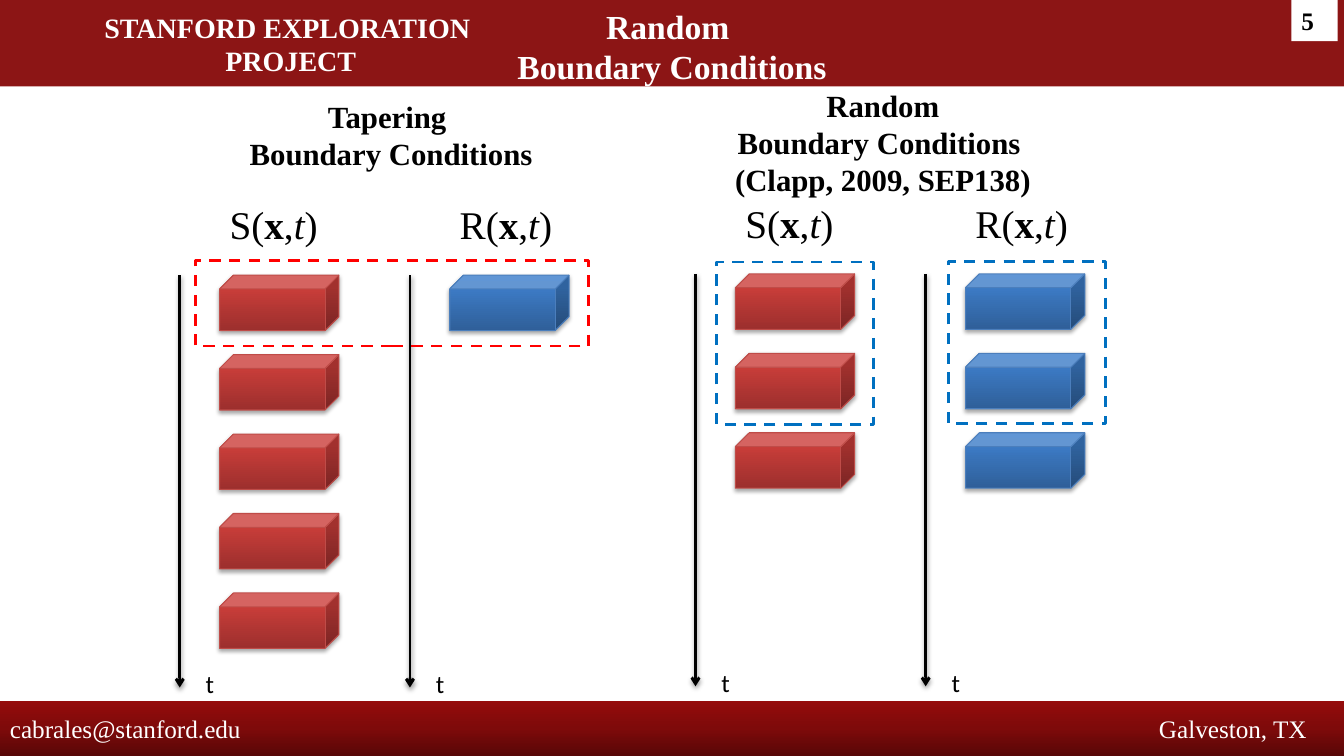
from dataclasses import dataclass

from lxml.etree import SubElement as Sub
from pptx import Presentation
from pptx.dml.color import RGBColor as RGB
from pptx.enum.dml import MSO_LINE as Dash
from pptx.enum.shapes import MSO_CONNECTOR as Conn, MSO_SHAPE as Kind
from pptx.enum.text import MSO_ANCHOR as Anchor, PP_ALIGN as Align
from pptx.oxml.ns import qn
from pptx.util import Inches, Pt

COLS, ROWS = 160, 90


@dataclass(frozen=True)
class Theme:
    """Colours, fonts and type sizes of the slide."""
    band: str = "8C1515"
    white: str = "FFFFFF"
    black: str = "000000"
    alert: str = "FF0000"
    frame: str = "0070C0"
    foot: tuple = ((0, "580707"), (50, "7E0A0A"), (100, "950C0C"))
    red: tuple = ((0, "9C2F2D"), (80, "CB3E3A"), (100, "CE3B37"))
    blue: tuple = ((0, "2F5F99"), (80, "3D7CC7"), (100, "3A7CCB"))
    rededge: str = "BF4C48"
    blueedge: str = "4B7EBC"
    serif: str = "Times New Roman"
    sans: str = "Calibri"
    small: int = 18
    brand: int = 20
    head: int = 22
    title: int = 24
    math: int = 28


class Deck:
    """Draws styled elements on a grid of 160 columns by 90 rows."""

    def __init__(self, theme):
        """Open a title-only slide of 13.33 by 7.5 inches."""
        self.theme = theme
        self.prs = Presentation()
        self.prs.slide_width, self.prs.slide_height = Inches(13.333), Inches(7.5)
        self.slide = self.prs.slides.add_slide(self.prs.slide_layouts[5])
        self.shapes = self.slide.shapes

    def grid(self, *spans):
        """Turn alternating columns and rows into lengths."""
        sizes = (self.prs.slide_width / COLS, self.prs.slide_height / ROWS)
        return [round(span * sizes[i % 2]) for i, span in enumerate(spans)]

    def shade(self, props, alpha, dist):
        """Put a soft downward shadow on a shape or connector."""
        glow = props.find(qn("a:effectLst"))
        if glow is None:
            glow = Sub(props, qn("a:effectLst"))
        drop = Sub(glow, qn("a:outerShdw"), blurRad=str(Pt(3.1)), dist=str(Pt(dist)),
                   dir="5400000", rotWithShape="0")
        tone = Sub(drop, qn("a:srgbClr"), val=self.theme.black)
        Sub(tone, qn("a:alpha"), val=str(alpha * 1000))

    def shape(self, spot, fill=None, edge=None, kind=Kind.RECTANGLE, width=0.75):
        """Add a preset shape with a plain, graded or empty fill."""
        item = self.shapes.add_shape(kind, *self.grid(*spot))
        item.shadow.inherit = False
        if fill is None:
            item.fill.background()
        elif isinstance(fill, str):
            item.fill.solid()
            item.fill.fore_color.rgb = RGB.from_string(fill)
        else:
            item.fill.gradient()
            item.fill.gradient_angle = 90
            stops = next(item.element.iter(qn("a:gsLst")))
            for old in list(stops):
                stops.remove(old)
            for place, tone in fill:
                stop = Sub(stops, qn("a:gs"), pos=str(place * 1000))
                Sub(stop, qn("a:srgbClr"), val=tone)
        if edge:
            item.line.color.rgb = RGB.from_string(edge)
            item.line.width = Pt(width)
        else:
            item.line.fill.background()
        return item

    def put(self, frame, lines, size, tone, bold=False, align=Align.CENTER, face=None):
        """Fill a text frame, one paragraph a line."""
        frame.vertical_anchor = Anchor.TOP
        for i, line in enumerate(lines):
            para = frame.add_paragraph() if i else frame.paragraphs[0]
            para.text = line
            para.alignment = align
            font = para.font
            font.name, font.size, font.bold = face or self.theme.serif, Pt(size), bold
            font.color.rgb = RGB.from_string(tone)

    def text(self, spot, lines, size, tone, **style):
        """Add an unwrapped text box."""
        frame = self.shapes.add_textbox(*self.grid(*spot)).text_frame
        frame.word_wrap = False
        self.put(frame, lines, size, tone, **style)
        return frame

    def title(self, spot, lines):
        """Place the title in front of what is drawn so far."""
        item = self.shapes.title
        self.shapes.element.append(item.element)
        item.left, item.top, item.width, item.height = self.grid(*spot)
        item.text_frame.word_wrap = False
        self.put(item.text_frame, lines, self.theme.title, self.theme.white, bold=True)

    def foot(self, spot, left, right):
        """Add the graded footer with text at both ends."""
        frame = self.shape(spot, self.theme.foot).text_frame
        props = frame.paragraphs[0]._p.get_or_add_pPr()
        stops = Sub(props, qn("a:tabLst"))
        Sub(stops, qn("a:tab"), pos=str(self.grid(154.4)[0]), algn="r")
        self.put(frame, [f"{left}\t{right}"], self.theme.small, self.theme.white,
                 align=Align.LEFT)
        frame.vertical_anchor = Anchor.MIDDLE

    def dashed(self, spot, tone):
        """Add a dashed outline."""
        self.shape(spot, None, tone, width=2).line.dash_style = Dash.DASH

    def axis(self, x, y):
        """Add a time arrow with its label."""
        line = self.shapes.add_connector(Conn.STRAIGHT, *self.grid(x, y, x, y + 49.1))
        line.line.color.rgb = RGB.from_string(self.theme.black)
        line.line.width = Pt(2)
        Sub(line.line._get_or_add_ln(), qn("a:tailEnd"), type="arrow")
        self.shade(line.element.spPr, 38, 1.6)
        self.text((x + 1.9, y + 46.2, 3.5, 4.8), ["t"], self.theme.small,
                  self.theme.black, align=Align.LEFT, face=self.theme.sans)

    def field(self, x, y, name, count, fill, edge):
        """Add a wavefield: its cubes, time axis and symbol."""
        for i in range(count):
            cube = self.shape((x + 4.75, y + 9.46 * i, 14.2, 6.6), fill, edge, Kind.CUBE)
            self.shade(cube.element.spPr, 35, 1.8)
        self.axis(x, y)
        frame = self.text((x + 4.75, y - 9.45, 14, 6.8), [""], self.theme.math,
                          self.theme.black, bold=None, align=Align.LEFT)
        for part in (f"{name}(", "x", ",", "t", ")"):
            run = frame.paragraphs[0].add_run()
            run.text = part
            if part == "x":
                run.font.bold = True
            if part == "t":
                run.font.italic = True


def main():
    """Build and save the slide."""
    look = Theme()
    deck = Deck(look)
    deck.shape((0, 0, COLS, 10.3), look.band)
    deck.foot((0, 83.4, COLS, 6.6), "cabrales@stanford.edu", "Galveston, TX")
    deck.text((11, 0.6, 46.4, 9.2), ["STANFORD EXPLORATION", " PROJECT"],
              look.brand, look.white, bold=True)
    deck.title((60.2, 0.1, 39.6, 10.9), ["Random ", "Boundary Conditions"])

    for x, y, reds, blues in ((21.4, 32.75, 5, 1), (82.8, 32.6, 3, 3)):
        deck.field(x, y, "S", reds, look.red, look.rededge)
        deck.field(x + 27.4, y, "R", blues, look.blue, look.blueedge)

    deck.dashed((23.3, 31, 46.8, 10.2), look.alert)
    for x, y in ((85.3, 31.2), (112.9, 31.1)):
        deck.dashed((x, y, 18.7, 19.3), look.frame)

    page = deck.shape((153.75, 0, 5.5, 4.9), look.white)
    deck.put(page.text_frame, ["5"], look.small, look.black, bold=True, align=Align.LEFT)
    heads = (
        ((28.3, 11, 36.5, 10.1), ["Tapering ", "Boundary Conditions"]),
        ((86.1, 9.7, 38, 14.5), ["Random", "Boundary Conditions ", "(Clapp, 2009, SEP138)"]),
    )
    for spot, lines in heads:
        deck.text(spot, lines, look.head, look.black, bold=True)
    deck.prs.save("out.pptx")


if __name__ == "__main__":
    main()
